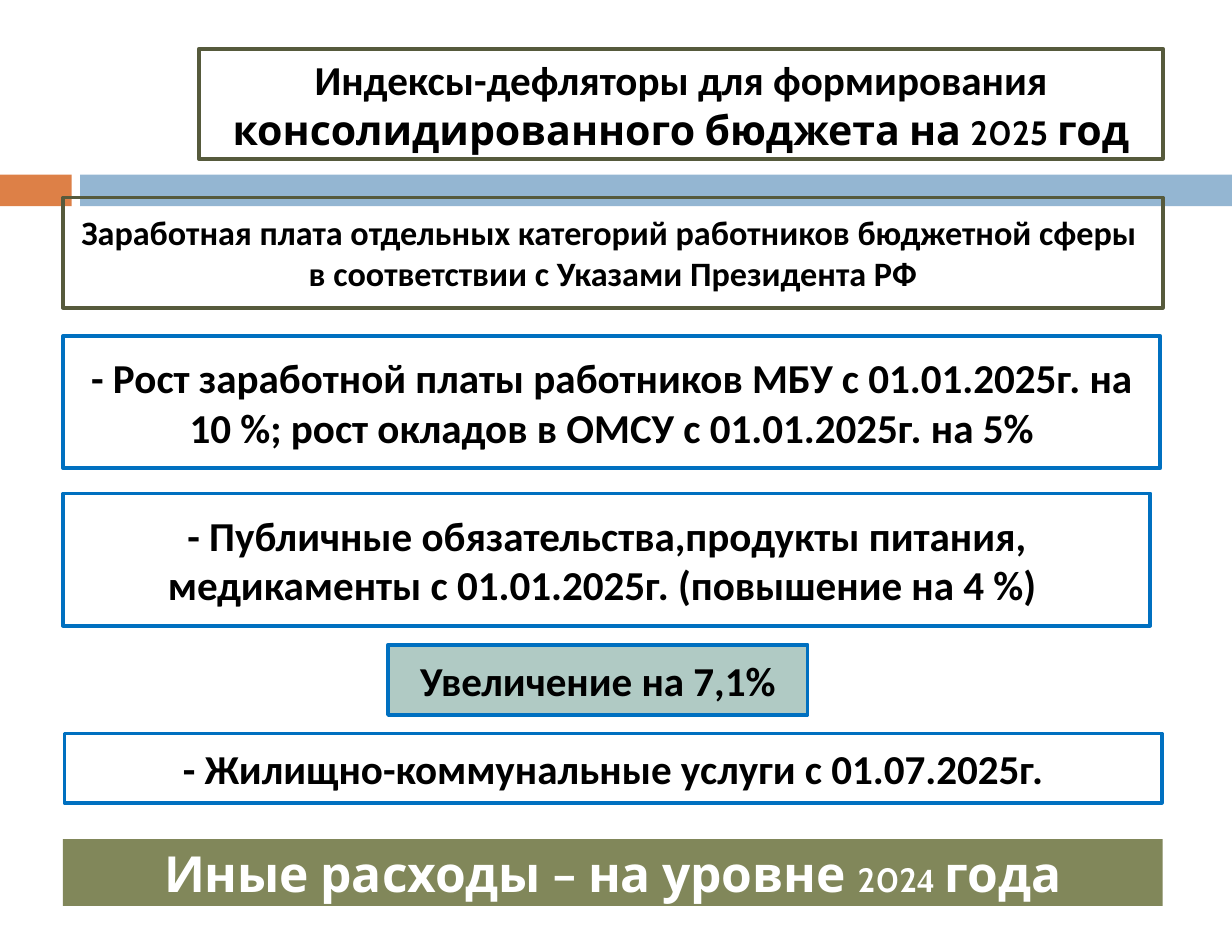
from dataclasses import dataclass

from pptx import Presentation
from pptx import util as u
from pptx.dml.color import RGBColor
from pptx.enum import shapes, text


@dataclass(frozen=True)
class Theme:
    """Colours, fonts and type sizes of the slide."""
    orange: str = "DD8047"
    sky: str = "94B6D2"
    olive: str = "81875A"
    dark_olive: str = "565A3C"
    blue: str = "0070C0"
    mint: str = "B0CAC4"
    black: str = "000000"
    white: str = "FFFFFF"
    main_font: str = "Calibri"
    accent_font: str = "Cabin"
    digit_font: str = "Times New Roman"
    border: float = 2.25
    small: float = 20
    note: float = 20.3
    body: float = 24.4
    gap: float = 28
    large: float = 29.5


THEME = Theme()
SLIDE_WIDTH, SLIDE_HEIGHT = 25.81, 19.61
LEFT, WIDTH = 1.32, 23.04


def add_box(slide, box, fill=None, line=None):
    """Add a rectangle at box (left, top, width, height in cm)."""
    shape = slide.shapes.add_shape(
        shapes.MSO_SHAPE.RECTANGLE, *(u.Cm(length) for length in box))
    shape.shadow.inherit = False
    if fill:
        shape.fill.solid()
        shape.fill.fore_color.rgb = RGBColor.from_string(fill)
    else:
        shape.fill.background()
    if line:
        shape.line.color.rgb = RGBColor.from_string(line)
        shape.line.width = u.Pt(THEME.border)
    else:
        shape.line.fill.background()
    return shape


def write_lines(shape, lines, color=THEME.black, anchor=text.MSO_ANCHOR.MIDDLE):
    """Write centred bold lines, each a list of (words, size, font) runs."""
    frame = shape.text_frame
    frame.word_wrap = True
    frame.vertical_anchor = anchor
    for index, pieces in enumerate(lines):
        paragraph = frame.add_paragraph() if index else frame.paragraphs[0]
        paragraph.alignment = text.PP_ALIGN.CENTER
        for words, size, font in pieces:
            run = paragraph.add_run()
            run.text = words
            run.font.size = u.Pt(size)
            run.font.name = font
            run.font.bold = True
            run.font.color.rgb = RGBColor.from_string(color)


def add_band(slide, box):
    """Add the two-colour band across the slide."""
    left, top, width, height = box
    tab, offset = 1.5, 1.68
    add_box(slide, (left, top, tab, height), THEME.orange)
    add_box(slide, (left + offset, top, width - offset, height), THEME.sky)


def add_title(slide, box):
    """Add the framed slide title."""
    cabin = THEME.accent_font
    write_lines(add_box(slide, box, line=THEME.dark_olive), [
        [("Индексы-дефляторы для формирования", THEME.body, THEME.main_font)],
        [("консолидированного бюджета на ", THEME.body, cabin),
         ("2025", THEME.small, cabin),
         (" год", THEME.body, cabin)],
    ], anchor=text.MSO_ANCHOR.TOP)


def add_statement(slide, box, lines, line=THEME.blue, fill=None, size=THEME.body):
    """Add a framed statement in the main font."""
    write_lines(add_box(slide, box, fill, line),
                [[(words, size, THEME.main_font)] for words in lines])


def add_footer(slide, box):
    """Add the filled bar about other expenses."""
    cabin = THEME.accent_font
    write_lines(add_box(slide, box, THEME.olive), [[
        ("Иные расходы – на уровне ", THEME.large, cabin),
        ("202", THEME.small, cabin),
        ("4", THEME.small, THEME.digit_font),
        (" ", THEME.gap, cabin),
        ("года", THEME.large, cabin),
    ]], THEME.white)


def main():
    """Build and save the slide."""
    presentation = Presentation()
    presentation.slide_width = u.Cm(SLIDE_WIDTH)
    presentation.slide_height = u.Cm(SLIDE_HEIGHT)
    slide = presentation.slides.add_slide(presentation.slide_layouts[6])

    add_band(slide, (0, 3.66, SLIDE_WIDTH, 0.66))
    add_title(slide, (4.17, 1.02, 20.19, 2.31))
    add_statement(slide, (LEFT, 7.04, 22.99, 2.77), [
        "- Рост заработной платы работников МБУ c 01.01.2025г. на 10 %; "
        "рост окладов в ОМСУ с 01.01.2025г. на 5%"])
    add_statement(slide, (LEFT, 10.34, 22.78, 2.77), [
        "- Публичные обязательства,продукты питания, "
        "медикаменты с 01.01.2025г. (повышение на 4 %) "])
    add_statement(slide, (8.13, 13.51, 8.79, 1.47), ["Увеличение на 7,1%"],
                  fill=THEME.mint)
    add_statement(slide, (1.35, 15.37, 22.99, 1.45),
                  ["- Жилищно-коммунальные услуги с 01.07.2025г."])
    add_footer(slide, (LEFT, 17.58, WIDTH, 1.4))
    add_statement(slide, (LEFT, 4.14, WIDTH, 2.31), [
        "Заработная плата отдельных категорий работников бюджетной сферы ",
        "в соответствии с Указами Президента РФ",
    ], line=THEME.dark_olive, size=THEME.note)

    presentation.save("out.pptx")


if __name__ == "__main__":
    main()
